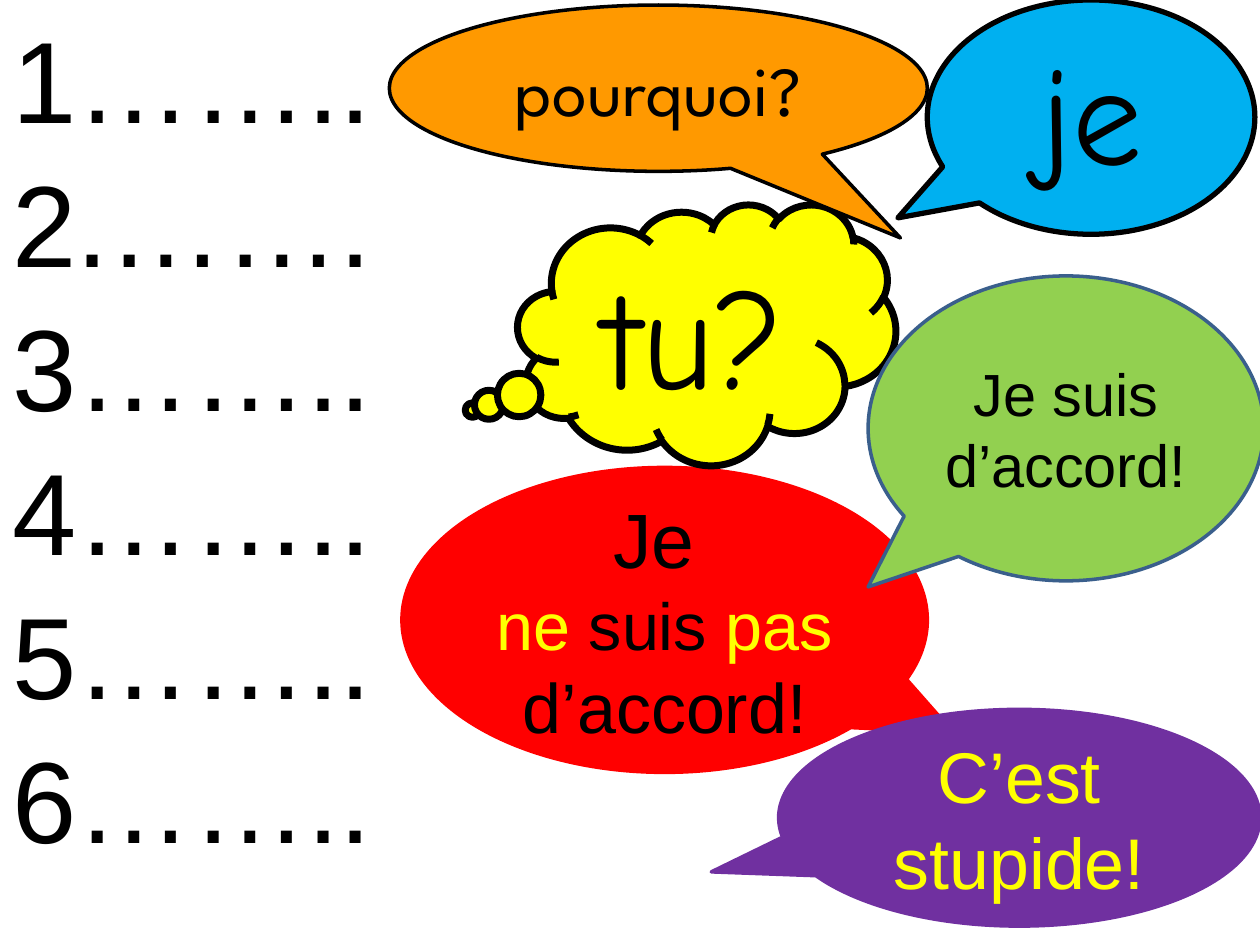
from pptx import Presentation
from pptx.dml.color import RGBColor
from pptx.enum import shapes, text
from pptx.util import Inches, Pt

BLACK, YELLOW, RED, PURPLE = "000000", "FFFF00", "FF0000", "7030A0"
ELLIPSE = shapes.MSO_SHAPE.OVAL_CALLOUT
CLOUD = shapes.MSO_SHAPE.CLOUD_CALLOUT
MIDDLE, TOP, BOTTOM = (text.MSO_ANCHOR.MIDDLE, text.MSO_ANCHOR.TOP,
                       text.MSO_ANCHOR.BOTTOM)


def color(value):
    return RGBColor.from_string(value)


def add_run(paragraph, words, size, font="Arial", ink=BLACK):
    run = paragraph.add_run()
    run.text = words
    run.font.size = Pt(size)
    run.font.name = font
    run.font.color.rgb = color(ink)


def add_numbered_lines(slide, box, lines):
    """Answer lines down the left side."""
    frame = slide.shapes.add_textbox(*map(Inches, box)).text_frame
    frame.word_wrap = True
    for index, words in enumerate(lines):
        paragraph = frame.paragraphs[0] if index == 0 else frame.add_paragraph()
        paragraph.line_spacing = 1.04
        add_run(paragraph, words, 66)


def add_bubble(slide, box, tail, fill, line, paragraphs,
               kind=ELLIPSE, anchor=MIDDLE, space_after=0):
    """Speech bubble; each paragraph is a list of run settings."""
    shape = slide.shapes.add_shape(kind, *map(Inches, box))
    shape.shadow.inherit = False
    for index, value in enumerate(tail):
        shape.adjustments[index] = value
    shape.fill.solid()
    shape.fill.fore_color.rgb = color(fill)
    line_color, width = line
    shape.line.color.rgb = color(line_color)
    shape.line.width = Pt(width)

    frame = shape.text_frame
    frame.word_wrap = True
    frame.vertical_anchor = anchor
    for index, runs in enumerate(paragraphs):
        paragraph = frame.paragraphs[0] if index == 0 else frame.add_paragraph()
        paragraph.alignment = text.PP_ALIGN.CENTER
        paragraph.space_after = Pt(space_after)
        for run in runs:
            add_run(paragraph, *run)


def main():
    presentation = Presentation()
    presentation.slide_width = Inches(10)
    presentation.slide_height = Inches(7.5)
    slide = presentation.slides.add_slide(presentation.slide_layouts[6])

    # Disagreement bubble, behind the others
    add_bubble(slide, (3.19, 3.71, 4.17, 2.42), (0.55, 0.37), RED, (RED, 2), [
        [("Je ", 44)],
        [("ne", 38, "Arial", YELLOW), (" suis ", 38),
         ("pas ", 38, "Arial", YELLOW), ("d’accord!", 40)],
    ])

    # Numbered answer lines
    dots = ["……..", ".…….", "……..", "……..", "……..", "…….."]
    add_numbered_lines(slide, (0, -0.03, 3.54, 6.77),
                       [f"{number}{dot}" for number, dot in enumerate(dots, 1)])

    # Pronoun bubbles
    add_bubble(slide, (4.11, 1.62, 3, 2.07), (-0.62, 0.29), YELLOW, (BLACK, 4),
               [[("tu?", 80, "Comic Neue")]], CLOUD, TOP, 10)
    add_bubble(slide, (7.36, 0, 2.6, 1.86), (-0.59, 0.43), "00B0F0", (BLACK, 3),
               [[("je", 80, "Comic Neue")]], ELLIPSE, BOTTOM, 10)

    # Opinion bubbles
    add_bubble(slide, (6.89, 2.19, 3.14, 2.42), (-0.5, 0.52), "92D050",
               ("3A5F8C", 2), [[("Je suis d’accord!", 34)]])
    add_bubble(slide, (6.18, 5.63, 3.82, 1.72), (-0.64, 0.25), PURPLE,
               (PURPLE, 2), [[("C’est stupide!", 41, "Arial", YELLOW)]])

    # Question bubble
    add_bubble(slide, (3.09, 0.04, 4.27, 1.32), (0.45, 0.9), "FF9900",
               (BLACK, 2), [[("pourquoi?", 40, "League Spartan")]])

    presentation.save("out.pptx")


if __name__ == "__main__":
    main()
